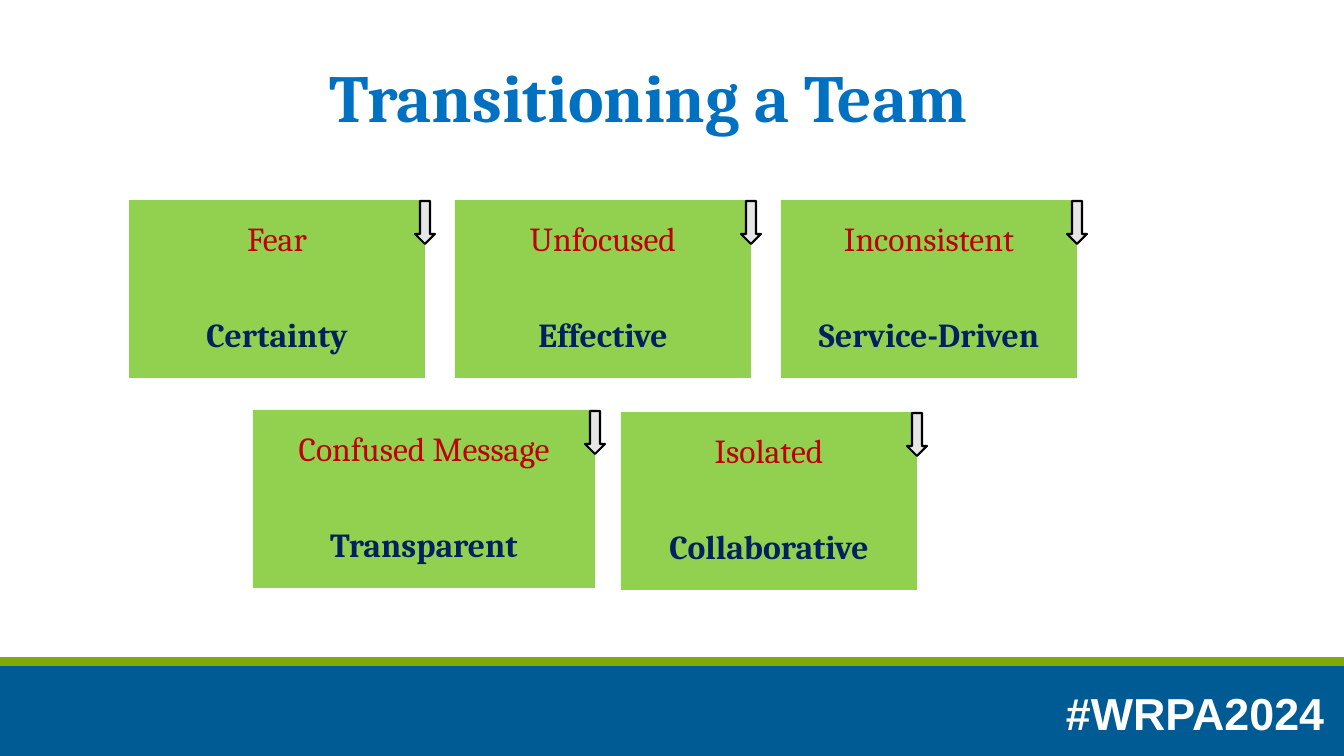
import pptx
import pptx.dml.color
import pptx.enum.shapes
import pptx.enum.text
import pptx.util

RGBColor = pptx.dml.color.RGBColor
SHAPES = pptx.enum.shapes.MSO_SHAPE
ALIGN = pptx.enum.text.PP_ALIGN
ANCHOR = pptx.enum.text.MSO_ANCHOR

WHITE = RGBColor(0xFF, 0xFF, 0xFF)
BLACK = RGBColor(0x00, 0x00, 0x00)
TITLE_BLUE = RGBColor(0x00, 0x70, 0xC0)
FOOTER_BLUE = RGBColor(0x00, 0x5B, 0x94)
STRIPE_GREEN = RGBColor(0x7E, 0xAB, 0x06)
CARD_GREEN = RGBColor(0x92, 0xD0, 0x50)
BEFORE_RED = RGBColor(0xC0, 0x00, 0x00)
AFTER_NAVY = RGBColor(0x00, 0x20, 0x60)
ARROW_GREY = RGBColor(0xE7, 0xE6, 0xE6)

SLIDE_W, SLIDE_H = 1344, 756
EMU_PER_PX = 12192000 / SLIDE_W

CARD_W, CARD_H = 296, 178
TOP_LEFT, TOP_Y, TOP_STEP = 129, 200, 326
ARROW_LENGTH, ARROW_WIDTH = 43, 20

TOP_ROW = [
    ("Fear", "Certainty"),
    ("Unfocused", "Effective"),
    ("Inconsistent", "Service-Driven"),
]
# left, top, width, before, after
BOTTOM_ROW = [
    (253, 410, 342, "Confused Message", "Transparent"),
    (621, 412, CARD_W, "Isolated", "Collaborative"),
]


def px(length):
    return pptx.util.Emu(round(length * EMU_PER_PX))


def write(paragraph, text, *, size, color, font="Cambria", bold=False,
          align=ALIGN.LEFT, line_spacing=None, space_before=None):
    paragraph.alignment = align
    if line_spacing:
        paragraph.line_spacing = line_spacing
    if space_before:
        paragraph.space_before = pptx.util.Pt(space_before)
    run = paragraph.add_run()
    run.text = text
    run.font.name = font
    run.font.size = pptx.util.Pt(size)
    run.font.bold = bold
    run.font.color.rgb = color


def add_block(slide, preset, left, top, width, height, fill, line=None, line_width=1):
    block = slide.shapes.add_shape(preset, px(left), px(top), px(width), px(height))
    block.shadow.inherit = False
    block.fill.solid()
    block.fill.fore_color.rgb = fill
    if line is None:
        block.line.fill.background()
    else:
        block.line.color.rgb = line
        block.line.width = pptx.util.Pt(line_width)
    return block


def add_label(slide, left, top, width, height, text, *, anchor=ANCHOR.TOP,
              wrap=True, **text_format):
    label = slide.shapes.add_textbox(px(left), px(top), px(width), px(height))
    frame = label.text_frame
    frame.word_wrap = wrap
    frame.vertical_anchor = anchor
    write(frame.paragraphs[0], text, **text_format)


def add_card(slide, left, top, width, before, after):
    card = add_block(slide, SHAPES.RECTANGLE, left, top, width, CARD_H, CARD_GREEN)
    frame = card.text_frame
    frame.word_wrap = True
    frame.vertical_anchor = ANCHOR.MIDDLE
    frame.margin_left = frame.margin_right = px(10)
    frame.margin_top = frame.margin_bottom = px(10)
    shared = {"size": 24, "align": ALIGN.CENTER, "line_spacing": 0.9}
    write(frame.paragraphs[0], before, color=BEFORE_RED, **shared)
    write(frame.add_paragraph(), after, color=AFTER_NAVY, bold=True,
          space_before=42.7, **shared)


def add_down_arrow(slide, center_x, top):
    center_y = top + ARROW_LENGTH / 2
    arrow = add_block(slide, SHAPES.RIGHT_ARROW, center_x - ARROW_LENGTH / 2,
                      center_y - ARROW_WIDTH / 2, ARROW_LENGTH, ARROW_WIDTH,
                      ARROW_GREY, line=BLACK, line_width=1.5)
    arrow.rotation = 90


def main():
    deck = pptx.Presentation()
    deck.slide_width, deck.slide_height = px(SLIDE_W), px(SLIDE_H)
    slide = deck.slides.add_slide(deck.slide_layouts[6])

    # Footer band
    add_block(slide, SHAPES.RECTANGLE, 0, 665, SLIDE_W, 91, FOOTER_BLUE)
    add_label(slide, 1056, 681, 288, 64, "#WRPA2024", wrap=False,
              size=32, color=WHITE, font="Arial", bold=True)
    add_block(slide, SHAPES.RECTANGLE, 0, 658, SLIDE_W, 7, STRIPE_GREEN, line=STRIPE_GREEN)

    # Title
    add_label(slide, 320, 28, 892, 146, "Transitioning a Team", anchor=ANCHOR.MIDDLE,
              size=48, color=TITLE_BLUE, bold=True, line_spacing=0.9)

    # Cards, then an arrow on the right edge of each
    cards = [(TOP_LEFT + i * TOP_STEP, TOP_Y, CARD_W, before, after)
             for i, (before, after) in enumerate(TOP_ROW)] + BOTTOM_ROW
    for card in cards:
        add_card(slide, *card)
    for left, top, width, _, _ in cards:
        add_down_arrow(slide, left + width, top + 1)

    deck.save("out.pptx")


if __name__ == "__main__":
    main()
